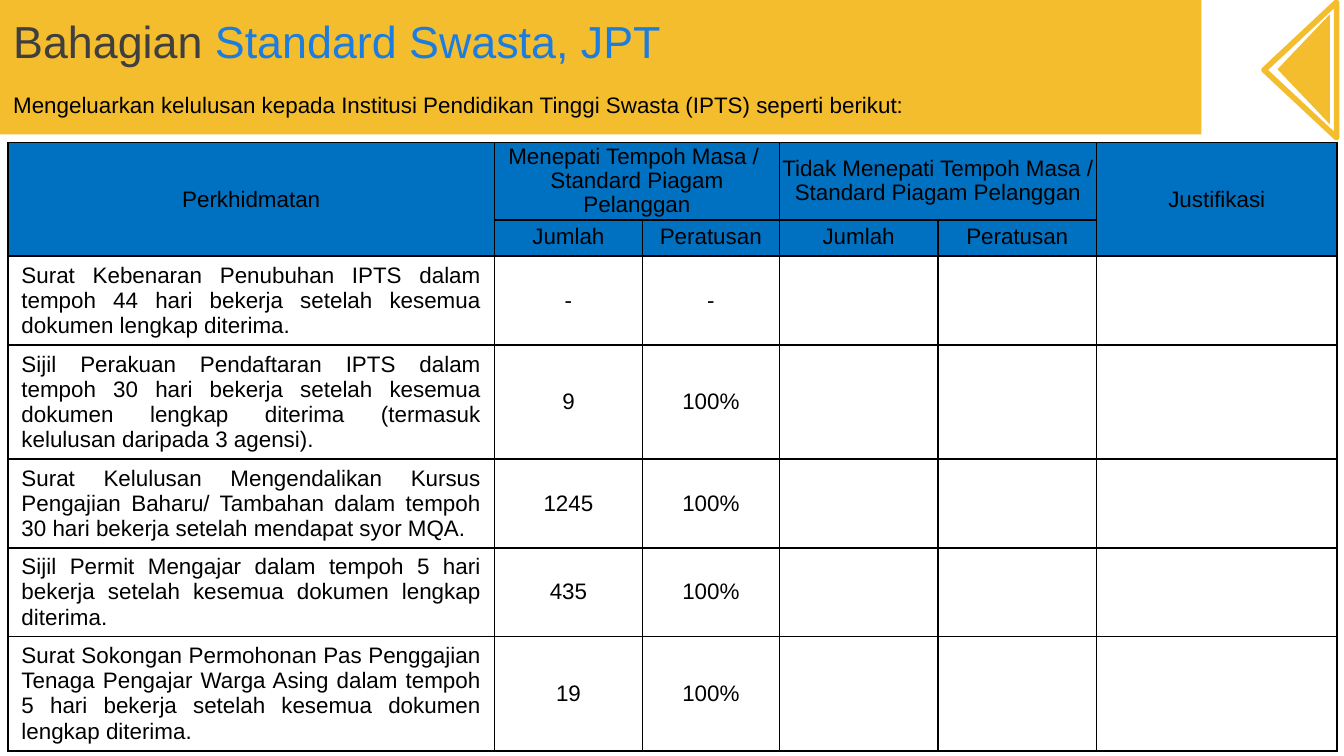
from dataclasses import dataclass

from lxml.etree import SubElement
from pptx import Presentation
from pptx.dml.color import RGBColor
from pptx.enum.shapes import MSO_SHAPE
from pptx.enum.text import MSO_ANCHOR, PP_ALIGN
from pptx.oxml.ns import qn
from pptx.util import Inches, Pt

COLORS = {
    "yellow": "F4BD2D",
    "header": "0070C0",
    "title": "3F3F3F",
    "accent": "1C7DE1",
    "black": "000000",
}


@dataclass
class CellStyle:
    side_margin: float
    end_margin: float
    align: PP_ALIGN = PP_ALIGN.CENTER
    spacing: float | None = None
    fill: str | None = None


@dataclass
class HeaderCell:
    row: int
    column: int
    lines: list[str]
    style: CellStyle
    last_row: int
    last_column: int


@dataclass
class Service:
    description: str
    count: str
    percentage: str


HEADER = CellStyle(0, 0, fill="header")
GROUP = CellStyle(0, 0, spacing=0.96, fill="header")
SUBHEADER = CellStyle(0, 0, spacing=0.88, fill="header")
# Small end margins keep the centred text inside the fixed row heights
DESCRIPTION = CellStyle(0.1, 0.02, PP_ALIGN.JUSTIFY)
VALUE = CellStyle(0.07, 0.05)

COLUMN_WIDTHS = [3.62, 1.1, 1.02, 1.18, 1.18, 1.79]
ROW_HEIGHTS = [0.38, 0.27, 0.66, 0.85, 0.66, 0.66, 0.85]

HEADER_CELLS = [
    HeaderCell(0, 0, ["Perkhidmatan"], HEADER, 1, 0),
    HeaderCell(0, 1, ["Menepati Tempoh Masa / ", "Standard Piagam Pelanggan"], GROUP, 0, 2),
    HeaderCell(0, 3, ["Tidak Menepati Tempoh Masa / Standard Piagam Pelanggan"], GROUP, 0, 4),
    HeaderCell(0, 5, ["Justifikasi"], HEADER, 1, 5),
] + [
    HeaderCell(1, column, [label], SUBHEADER, 1, column)
    for column, label in enumerate(["Jumlah", "Peratusan"] * 2, start=1)
]

SERVICES = [
    Service("Surat Kebenaran Penubuhan IPTS dalam tempoh 44 hari bekerja setelah "
            "kesemua dokumen lengkap diterima.", "-", "-"),
    Service("Sijil Perakuan Pendaftaran IPTS dalam tempoh 30 hari bekerja setelah kesemua "
            "dokumen lengkap diterima (termasuk kelulusan daripada 3 agensi).", "9", "100%"),
    Service("Surat Kelulusan Mengendalikan Kursus Pengajian Baharu/ Tambahan dalam tempoh "
            "30 hari bekerja setelah mendapat syor MQA.", "1245", "100%"),
    Service("Sijil Permit Mengajar dalam tempoh 5 hari bekerja setelah kesemua dokumen "
            "lengkap diterima.", "435", "100%"),
    Service("Surat Sokongan Permohonan Pas Penggajian Tenaga Pengajar Warga Asing dalam "
            "tempoh 5 hari bekerja setelah kesemua dokumen lengkap diterima.", "19", "100%"),
]


def rgb(name: str) -> RGBColor:
    return RGBColor.from_string(COLORS[name])


def add_run(paragraph, text: str, size: float = 12, color: str = "black") -> None:
    run = paragraph.add_run()
    run.text = text
    for attribute, value in {"name": "Arial", "size": Pt(size)}.items():
        setattr(run.font, attribute, value)
    run.font.color.rgb = rgb(color)


def add_shape(slide, kind: MSO_SHAPE, box: tuple, fill: str | None = None, rotation: float = 0):
    shape = slide.shapes.add_shape(kind, *map(Inches, box))
    shape.shadow.inherit = False
    shape.rotation = rotation
    shape.line.fill.background()
    if fill:
        shape.fill.solid()
        shape.fill.fore_color.rgb = rgb(fill)
    else:
        shape.fill.background()
    return shape


def add_text(slide, box: tuple, anchor: MSO_ANCHOR, align: PP_ALIGN, runs: list) -> None:
    frame = slide.shapes.add_textbox(*map(Inches, box)).text_frame
    frame.word_wrap = True
    frame.vertical_anchor = anchor
    paragraph = frame.paragraphs[0]
    paragraph.alignment = align
    for text, size, color in runs:
        add_run(paragraph, text, size, color)


def add_borders(cell) -> None:
    properties = cell._tc.get_or_add_tcPr()
    for position, side in enumerate(("a:lnL", "a:lnR", "a:lnT", "a:lnB")):
        line = properties.makeelement(qn(side), {"w": str(Pt(1))})
        fill = SubElement(line, qn("a:solidFill"))
        SubElement(fill, qn("a:srgbClr"), val=COLORS["black"])
        properties.insert(position, line)


def write_cell(cell, lines: list[str], style: CellStyle) -> None:
    side, end = Inches(style.side_margin), Inches(style.end_margin)
    formats = {
        "margin_left": side, "margin_right": side,
        "margin_top": end, "margin_bottom": end,
        "vertical_anchor": MSO_ANCHOR.MIDDLE,
    }
    for attribute, value in formats.items():
        setattr(cell, attribute, value)
    for index, line in enumerate(lines):
        frame = cell.text_frame
        paragraph = frame.add_paragraph() if index else frame.paragraphs[0]
        paragraph.alignment = style.align
        paragraph.line_spacing = style.spacing
        add_run(paragraph, line)


def add_service_table(slide) -> None:
    box = (0.06, 1.06, sum(COLUMN_WIDTHS), sum(ROW_HEIGHTS))
    table = slide.shapes.add_table(
        len(ROW_HEIGHTS), len(COLUMN_WIDTHS), *map(Inches, box)).table
    table.first_row = table.horz_banding = False
    for column, width in zip(table.columns, COLUMN_WIDTHS):
        column.width = Inches(width)
    for row, height in zip(table.rows, ROW_HEIGHTS):
        row.height = Inches(height)

    # Fills and borders
    for row_index, row in enumerate(table.rows):
        for cell in row.cells:
            if row_index < 2:
                cell.fill.solid()
                cell.fill.fore_color.rgb = rgb(HEADER.fill)
            else:
                cell.fill.background()
            add_borders(cell)

    # Two-level header
    for header in HEADER_CELLS:
        cell = table.cell(header.row, header.column)
        last = table.cell(header.last_row, header.last_column)
        if (header.row, header.column) != (header.last_row, header.last_column):
            cell.merge(last)
        write_cell(cell, header.lines, header.style)

    # One row per service
    for row_index, service in enumerate(SERVICES, start=2):
        write_cell(table.cell(row_index, 0), [service.description], DESCRIPTION)
        write_cell(table.cell(row_index, 1), [service.count], VALUE)
        write_cell(table.cell(row_index, 2), [service.percentage], VALUE)


def main() -> None:
    presentation = Presentation()
    presentation.slide_width = Inches(10)
    presentation.slide_height = Inches(10) * 9 // 16
    slide = presentation.slides.add_slide(presentation.slide_layouts[6])

    # Title band
    add_shape(slide, MSO_SHAPE.RECTANGLE, (0, 0, 8.94, 1), "yellow")
    add_text(slide, (0, 0.63, 8.86, 0.3), MSO_ANCHOR.TOP, PP_ALIGN.JUSTIFY, [
        ("Mengeluarkan kelulusan kepada Institusi Pendidikan Tinggi Swasta (IPTS) "
         "seperti berikut:", 12, "black")])
    add_text(slide, (0, 0.01, 6.42, 0.59), MSO_ANCHOR.MIDDLE, PP_ALIGN.LEFT, [
        ("Bahagian ", 24, "title"), ("Standard Swasta, JPT", 24, "accent")])

    add_service_table(slide)

    # Corner arrow: solid triangle inside an outlined one
    triangle = MSO_SHAPE.ISOSCELES_TRIANGLE
    add_shape(slide, triangle, (9.29, 0.32, 0.82, 0.39), "yellow", 270)
    outline = add_shape(slide, triangle, (9.17, 0.25, 1.01, 0.54), rotation=270).line
    outline.color.rgb = rgb("yellow")
    outline.width = Pt(3)
    SubElement(outline._get_or_add_ln(), qn("a:round"))

    presentation.save("out.pptx")


if __name__ == "__main__":
    main()
